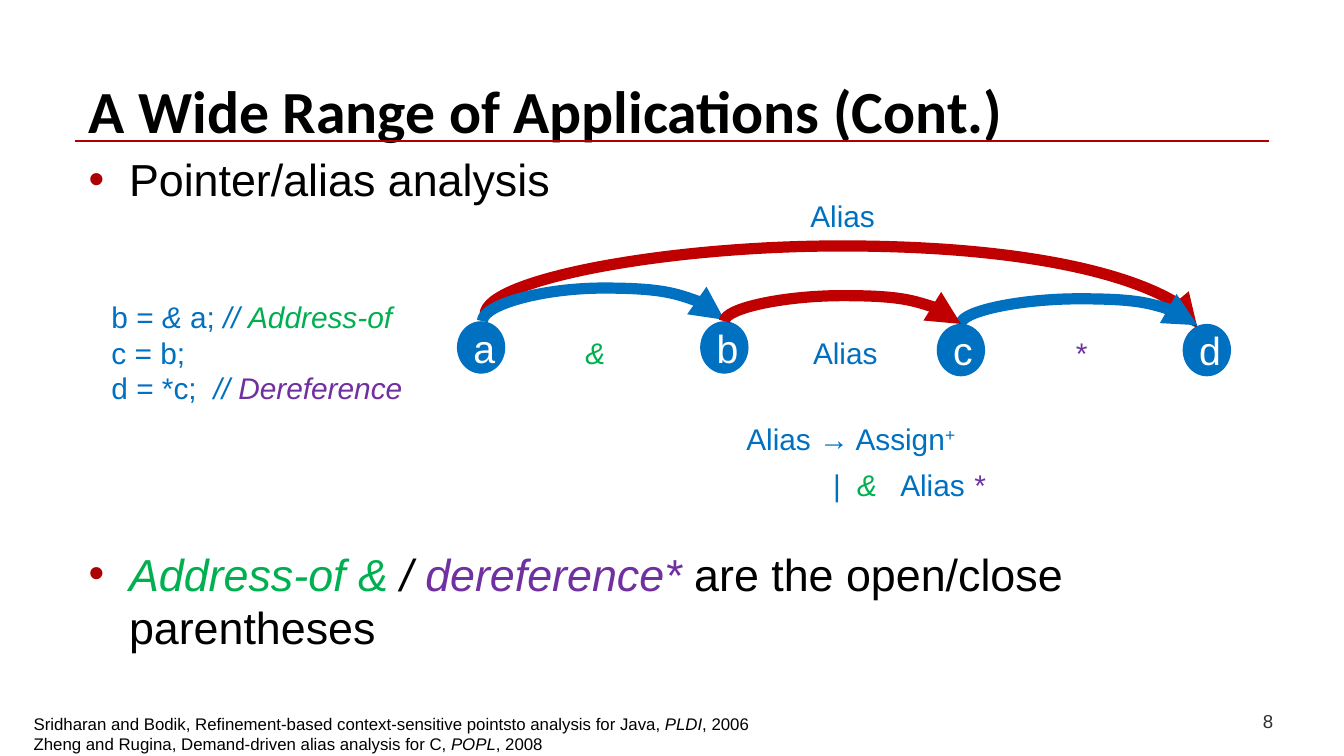
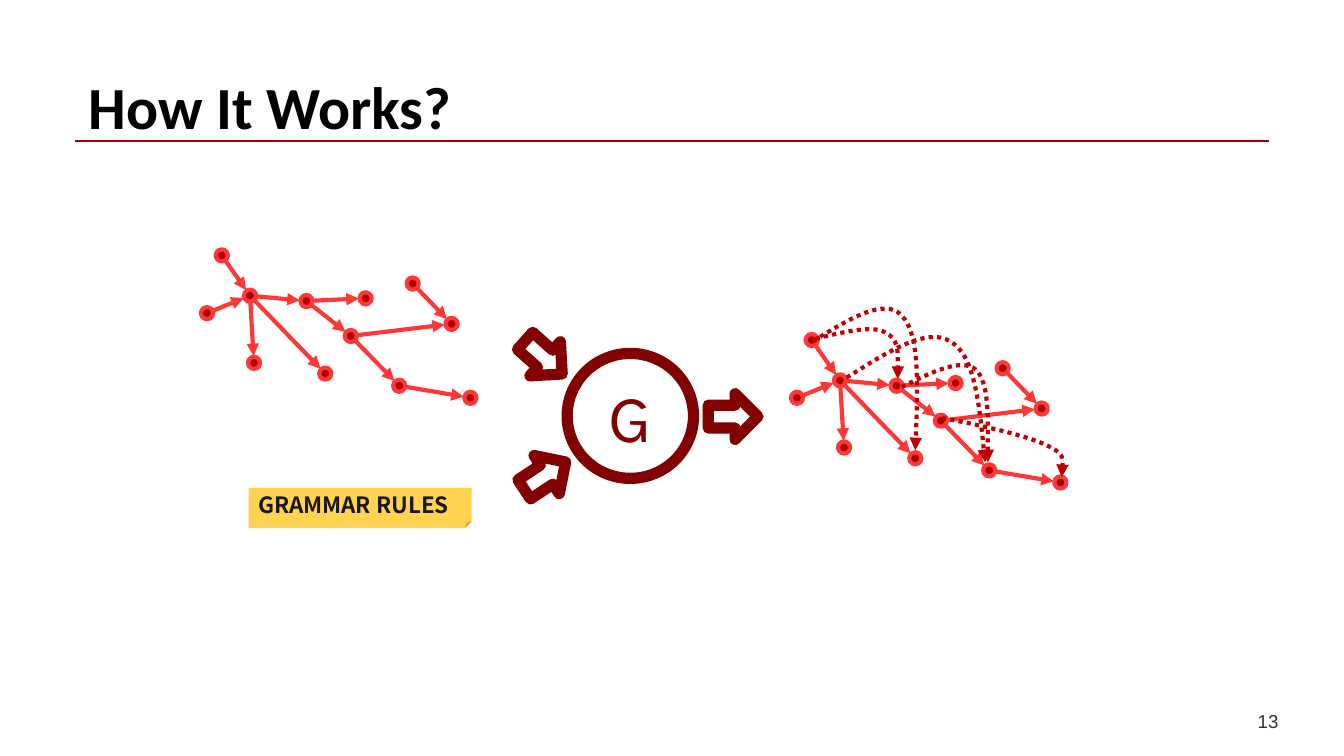
"""Builds two slides: pointer/alias analysis and how grammar-driven graph closure works."""
from math import hypot

from lxml import etree
from pptx import Presentation
from pptx.dml.color import RGBColor
from pptx.enum.dml import MSO_LINE
from pptx.enum.shapes import MSO_CONNECTOR, MSO_SHAPE
from pptx.enum.text import MSO_ANCHOR, MSO_AUTO_SIZE, PP_ALIGN
from pptx.oxml.ns import qn
from pptx.util import Inches, Pt

LEFT, CENTER = PP_ALIGN.LEFT, PP_ALIGN.CENTER
TOP, MIDDLE, BOTTOM = MSO_ANCHOR.TOP, MSO_ANCHOR.MIDDLE, MSO_ANCHOR.BOTTOM
STRAIGHT, CURVED = MSO_CONNECTOR.STRAIGHT, MSO_CONNECTOR.CURVE
ELLIPSE, DOT = MSO_SHAPE.OVAL, MSO_SHAPE.FLOWCHART_CONNECTOR
NOTE, ARROW = MSO_SHAPE.FOLDED_CORNER, MSO_SHAPE.RIGHT_ARROW
DOTTED = MSO_LINE.ROUND_DOT

BLACK = RGBColor(0, 0, 0)
WHITE = RGBColor(0xFF, 0xFF, 0xFF)
INK = RGBColor(0x18, 0x18, 0x18)
GRAY = RGBColor(0x30, 0x30, 0x30)
RULE = RGBColor(0xAD, 0x01, 0x01)
RED = RGBColor(0xC0, 0, 0)
BRIGHT = RGBColor(0xFE, 0x37, 0x37)
MAROON = RGBColor(0x82, 0x01, 0x01)
BLUE = RGBColor(0, 0x70, 0xC0)
GREEN = RGBColor(0, 0xB0, 0x50)
PURPLE = RGBColor(0x70, 0x30, 0xA0)
GOLD = RGBColor(0xFF, 0xC0, 0)

WIDTH, MARGIN = 10, 0.56
HEIGHT = WIDTH * 9 / 16
CONTENT = WIDTH - 2 * MARGIN
TIGHT = (0.07, 0.04)
NORMAL = (0.1, 0.05)

BULLETS = [
    (12, [("Pointer/alias analysis", BLACK)]),
    (182.5, [("Address-of & ", GREEN, True), ("/ ", BLACK, True),
             ("dereference* ", PURPLE, True), ("are the open/close parentheses", BLACK)]),
]
CODE = [
    [("b = ", BLUE), ("& ", BLUE, True), ("a;", BLUE), (" // ", BLUE, True),
     ("Address-of", GREEN, True)],
    [("c = b;", BLUE)],
    [("d = *c;\t", BLUE), ("// ", BLUE, True), ("Dereference", PURPLE, True)],
]
PRODUCTION = [[("Alias → Assign", BLUE), ("+", BLUE, False, 30000)]]
ALTERNATIVE = [[("|\t", BLUE), ("&\t", GREEN, True), ("Alias ", BLUE), ("*", PURPLE, True)]]
CITATIONS = [
    [("Sridharan and Bodik, Refinement-based context-sensitive pointsto analysis for Java, ", BLACK),
     ("PLDI", BLACK, True), (", 2006", BLACK)],
    [("Zheng and Rugina, Demand-driven alias analysis for C, ", BLACK),
     ("POPL", BLACK, True), (", 2008", BLACK)],
]
EDGE_LABELS = [
    ("Alias", BLUE, False, 6.27, 1.43), ("&", GREEN, True, 4.43, 2.45),
    ("Alias", BLUE, False, 6.29, 2.45), ("*", PURPLE, True, 8.04, 2.45),
]
VARIABLES = {"a": (3.4, 2.39), "b": (5.21, 2.39), "c": (6.97, 2.41), "d": (8.8, 2.41)}
OUTER_ARC = ((3.61, 2.34), (8.91, 2.44), 1.83, RED)
INNER_ARCS = [
    ((3.59, 2.39), (5.39, 2.38), 2.14, BLUE),
    ((7.15, 2.41), (8.91, 2.42), 2.22, BLUE),
    ((5.39, 2.39), (7.15, 2.41), 2.2, RED),
]

VERTICES = {
    "source": (1.65, 1.9), "inlet": (1.54, 2.33), "hub": (1.86, 2.2), "below": (1.89, 2.7),
    "far": (2.42, 2.78), "fork": (2.28, 2.24), "east": (2.72, 2.22), "joint": (2.61, 2.5),
    "upper": (3.07, 2.11), "right": (3.36, 2.41), "lower": (2.97, 2.87), "last": (3.5, 2.96),
}
EDGES = [
    ("source", "hub"), ("inlet", "hub"), ("hub", "below"), ("hub", "far"),
    ("hub", "fork"), ("fork", "east"), ("fork", "joint"), ("joint", "right"),
    ("upper", "right"), ("joint", "lower"), ("lower", "last"),
]
CLOSURE_SHIFT = (4.39, 0.63)
CLOSURE_CURVES = [
    [(6.07, 2.52), (6.28, 2.47), (6.48, 2.42), (6.58, 2.47), (6.69, 2.52), (6.68, 2.67), (6.68, 2.82)],
    [(6.71, 2.88), (6.93, 2.77), (7.15, 2.66), (7.26, 2.75), (7.36, 2.85), (7.35, 3.15), (7.35, 3.44)],
    [(6.05, 2.54), (6.32, 2.37), (6.59, 2.21), (6.71, 2.35), (6.84, 2.48), (6.83, 2.91), (6.81, 3.35)],
    [(7.01, 3.11), (7.32, 3.17), (7.63, 3.24), (7.78, 3.31), (7.93, 3.38), (7.91, 3.47), (7.9, 3.55)],
    [(6.3, 2.81), (6.6, 2.62), (6.9, 2.43), (7.07, 2.54), (7.25, 2.64), (7.29, 3.04), (7.33, 3.44)],
]
FLOW_ARROWS = [(3.87, 3.37, 326.6), (5.27, 2.93, 0), (3.86, 2.49, 41.7)]


def add_spans(para, spans, size, font="Arial", bold=False):
    for text, color, *style in spans:
        span = para.add_run()
        span.text = text
        formats = {"size": Pt(size), "name": font, "bold": bold, "italic": bool(style and style[0])}
        for name, value in formats.items():
            setattr(span.font, name, value)
        span.font.color.rgb = color
        if len(style) > 1:
            span.font._element.set("baseline", str(style[1]))


def format_frame(frame, insets=TIGHT, anchor=TOP, wrap=True):
    side, end = (Inches(inset) for inset in insets)
    formats = {"margin_left": side, "margin_right": side, "margin_top": end, "margin_bottom": end,
               "vertical_anchor": anchor, "word_wrap": wrap, "auto_size": MSO_AUTO_SIZE.NONE}
    for name, value in formats.items():
        setattr(frame, name, value)


def write(frame, lines, size, align=LEFT, stops=(), font="Arial", bold=False, **layout):
    format_frame(frame, **layout)
    for index, spans in enumerate(lines):
        para = frame.add_paragraph() if index else frame.paragraphs[0]
        para.alignment = align
        if stops:
            tabs = etree.SubElement(para._p.get_or_add_pPr(), qn("a:tabLst"))
            for stop in stops:
                etree.SubElement(tabs, qn("a:tab"), pos=str(Inches(stop)), algn="l")
        add_spans(para, spans, size, font, bold)


def add_text(page, place, lines, size, **layout):
    box = page.shapes.add_textbox(*map(Inches, place))
    write(box.text_frame, lines, size, **layout)


def place_on(shape, place):
    for name, value in zip(("left", "top", "width", "height"), place):
        setattr(shape, name, Inches(value))


def add_figure(shapes, kind, place, fill, line=None, weight=0):
    shape = shapes.add_shape(kind, *map(Inches, place))
    shape.shadow.inherit = False
    shape.fill.solid()
    shape.fill.fore_color.rgb = fill
    if line is None:
        shape.line.fill.background()
    else:
        shape.line.color.rgb = line
        shape.line.width = Pt(weight)
    return shape


def add_head(shape):
    etree.SubElement(shape.line._get_or_add_ln(), qn("a:tailEnd"), type="triangle")


def add_line(shapes, start, end, color, weight, kind=STRAIGHT, head=True):
    line = shapes.add_connector(kind, *map(Inches, (*start, *end)))
    line.line.color.rgb = color
    line.line.width = Pt(weight)
    if head:
        add_head(line)
    etree.SubElement(line._element.spPr, qn("a:effectLst"))
    return line


def add_arc(page, start, end, peak, color):
    (x1, y1), (x2, y2) = start, end
    run, drop = x2 - x1, abs(y2 - y1)
    left, top = (x1 + x2 - drop) / 2, (y1 + y2 - run) / 2
    arc = add_line(page.shapes, (left, top), (left + drop, top + run), color, 6, CURVED)
    down = y2 > y1
    frame = arc._element.spPr.find(qn("a:xfrm"))
    frame.set("rot", str((270 if down else 90) * 60000))
    frame.set("flipH", "1")
    if not down:
        frame.set("flipV", "1")
    guides = arc._element.spPr.find(qn("a:prstGeom")).get_or_add_avLst()
    bend = round((peak - y1) / (y2 - y1) * 100000)
    etree.SubElement(guides, qn("a:gd"), name="adj1", fmla=f"val {bend}")


def add_closure_curve(shapes, points):
    start, *rest = [(Inches(x), Inches(y)) for x, y in points]
    builder = shapes.build_freeform(*start)
    builder.add_line_segments(rest, close=False)
    curve = builder.convert_to_shape()
    curve.shadow.inherit = False
    curve.fill.background()
    curve.line.color.rgb = RED
    curve.line.width = Pt(2.25)
    curve.line.dash_style = DOTTED
    add_head(curve)
    outline = curve._element.spPr.find(".//" + qn("a:path"))
    segments = outline.findall(qn("a:lnTo"))
    for index in range(0, len(segments), 3):
        bezier = etree.SubElement(outline, qn("a:cubicBezTo"))
        for segment in segments[index:index + 3]:
            bezier.append(segment[0])
            outline.remove(segment)


def add_graph(page, shift=(0, 0), curves=()):
    shapes = page.shapes.add_group_shape().shapes
    size, gap = 0.09, 0.05
    centers = {name: (x + shift[0], y + shift[1]) for name, (x, y) in VERTICES.items()}
    for x, y in centers.values():
        add_figure(shapes, DOT, (x - size / 2, y - size / 2, size, size), RULE, BRIGHT, 2.25)
    for source, target in EDGES:
        (x1, y1), (x2, y2) = centers[source], centers[target]
        length = hypot(x2 - x1, y2 - y1)
        dx, dy = gap * (x2 - x1) / length, gap * (y2 - y1) / length
        add_line(shapes, (x1 + dx, y1 + dy), (x2 - dx, y2 - dy), BRIGHT, 2.25)
    for points in curves:
        add_closure_curve(shapes, points)


def start_page(deck, layout, title, title_top, number):
    page = deck.slides.add_slide(deck.slide_layouts[layout])
    place_on(page.shapes.title, (MARGIN, title_top, CONTENT, 0.9))
    frame = page.shapes.title.text_frame
    write(frame, [[(title, BLACK)]], 32, font="Calibri", bold=True, insets=NORMAL, anchor=BOTTOM)
    frame.paragraphs[0].line_spacing = Pt(35)
    add_line(page.shapes, (MARGIN, 1.05), (WIDTH - MARGIN, 1.05), RULE, 1, head=False)
    add_text(page, (8.97, 5.2, 0.93, 0.3), [[(str(number), GRAY)]], 10,
             align=CENTER, insets=NORMAL, anchor=BOTTOM)
    return page


def fill_bullets(body):
    place_on(body, (MARGIN, 1.08, CONTENT, HEIGHT - 1.08))
    write(body.text_frame, [spans for _, spans in BULLETS], 24, insets=NORMAL)
    for para, (space, _) in zip(body.text_frame.paragraphs, BULLETS):
        para.space_before = Pt(space)
        props = para._p.get_or_add_pPr()
        props.set("marL", str(Inches(0.3)))
        props.set("indent", str(-Inches(0.3)))
        tint = etree.SubElement(props, qn("a:buClr"))
        etree.SubElement(tint, qn("a:srgbClr"), val=str(RULE))
        etree.SubElement(props, qn("a:buChar"), char="•")


def build_applications(deck):
    page = start_page(deck, 1, "A Wide Range of Applications (Cont.)", 0.23, 8)
    fill_bullets(page.placeholders[1])
    add_arc(page, *OUTER_ARC)
    for name, corner in VARIABLES.items():
        node = add_figure(page.shapes, ELLIPSE, (*corner, 0.36, 0.39), BLUE)
        write(node.text_frame, [[(name, WHITE)]], 21, align=CENTER, anchor=MIDDLE)
    for arc in INNER_ARCS:
        add_arc(page, *arc)
    for text, color, italic, middle, top in EDGE_LABELS:
        add_text(page, (middle - 0.43, top, 0.86, 0.35), [[(text, color, italic)]], 16, align=CENTER)
    add_text(page, (0.76, 2.18, 2.36, 1.15), CODE, 16, stops=[0.76])
    add_text(page, (5.37, 3.09, 1.92, 0.35), PRODUCTION, 16, align=CENTER)
    add_text(page, (6.1, 3.29, 2.59, 0.5), ALTERNATIVE, 16, stops=[0.18, 0.5],
             insets=NORMAL, anchor=BOTTOM)
    add_text(page, (0.18, 5.27, 5.52, 0.35), CITATIONS, 9, wrap=False)


def build_workflow(deck):
    page = start_page(deck, 5, "How It Works?", 0.2, 13)
    add_graph(page, CLOSURE_SHIFT, CLOSURE_CURVES)
    add_graph(page)
    note = add_figure(page.shapes, NOTE, (1.85, 3.63, 1.66, 0.3), GOLD)
    tint = note._element.spPr.find(".//" + qn("a:srgbClr"))
    etree.SubElement(tint, qn("a:alpha"), val="69000")
    write(note.text_frame, [[("GRAMMAR RULES", INK)]], 12, font="Noto Sans CJK TC",
          bold=True, anchor=MIDDLE)
    engine = add_figure(page.shapes, ELLIPSE, (4.22, 2.63, 0.94, 0.93), WHITE, MAROON, 6)
    write(engine.text_frame, [[("G", MAROON)]], 36, align=CENTER, font="Karla", anchor=MIDDLE)
    for left, top, angle in FLOW_ARROWS:
        arrow = add_figure(page.shapes, ARROW, (left, top, 0.37, 0.34), WHITE, MAROON, 6)
        arrow.rotation = angle


def main():
    deck = Presentation()
    deck.slide_width, deck.slide_height = Inches(WIDTH), Inches(HEIGHT)
    build_applications(deck)
    build_workflow(deck)
    deck.save("out.pptx")


if __name__ == "__main__":
    main()
